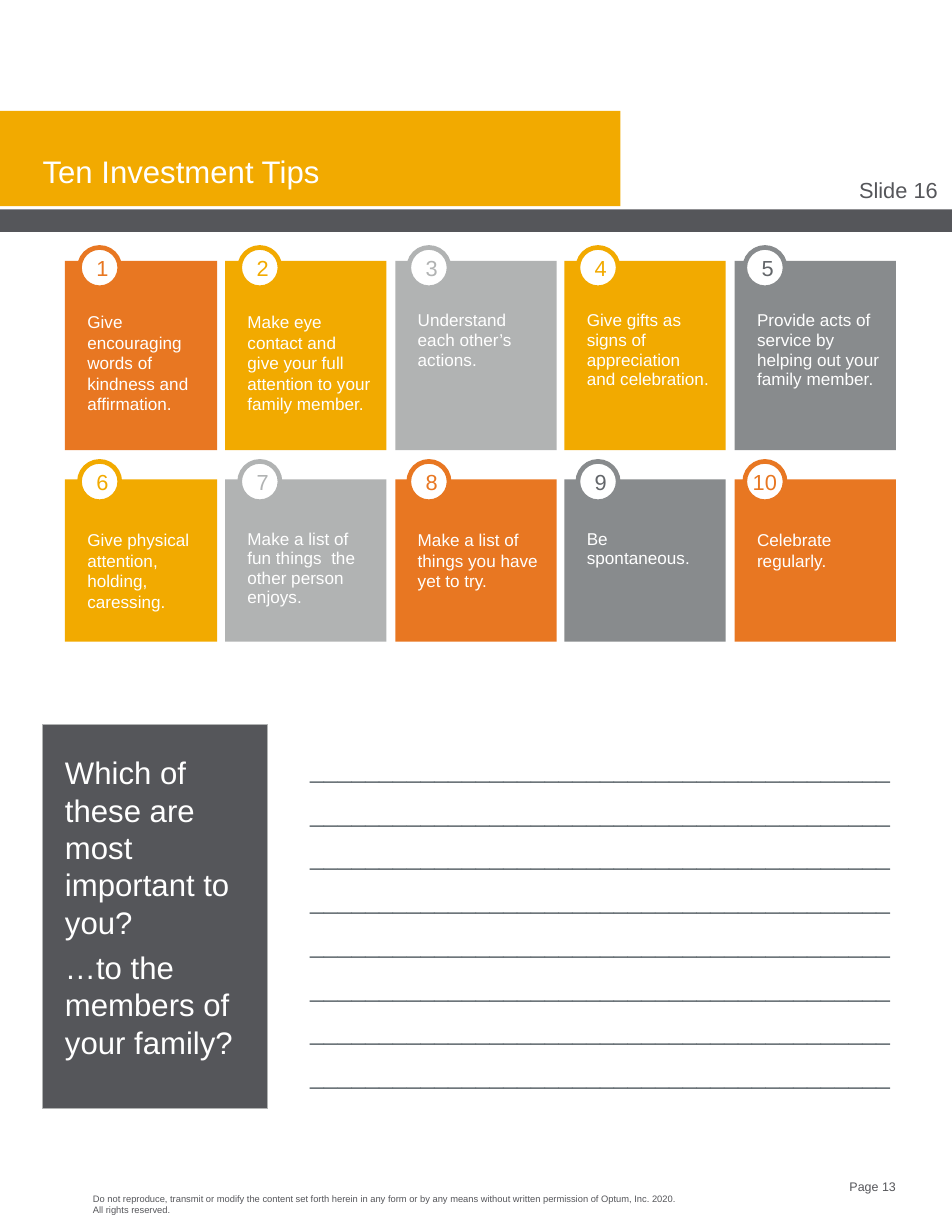
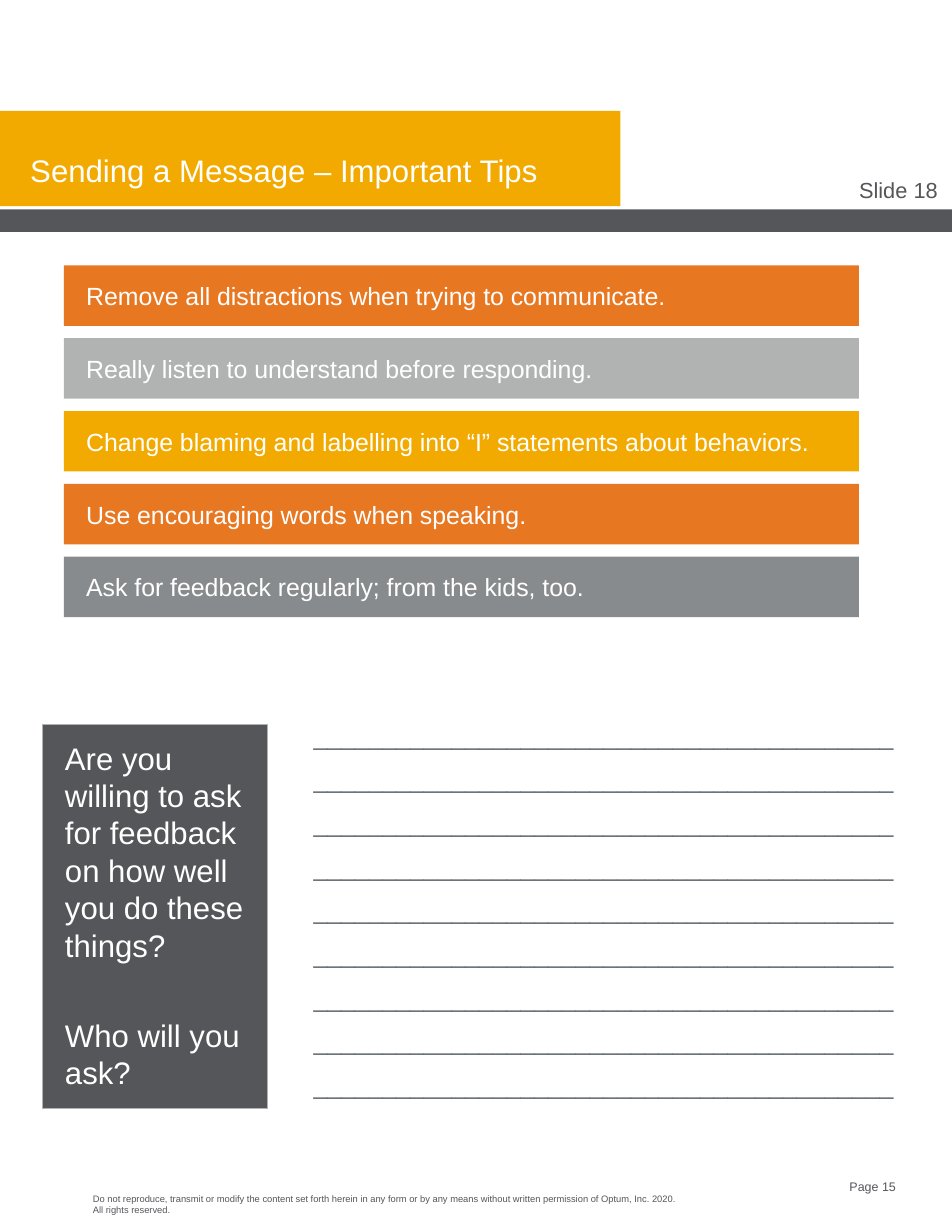
from pptx import Presentation
from pptx.dml.color import RGBColor
from pptx.enum.shapes import MSO_SHAPE
from pptx.enum.text import MSO_ANCHOR, PP_ALIGN
from pptx.util import Inches, Pt

RECT, OVAL = MSO_SHAPE.RECTANGLE, MSO_SHAPE.OVAL
TOP, MIDDLE = MSO_ANCHOR.TOP, MSO_ANCHOR.MIDDLE
LEFT, CENTER, RIGHT = PP_ALIGN.LEFT, PP_ALIGN.CENTER, PP_ALIGN.RIGHT

FONT = "Arial"
WHITE, DARK, RULE = "FFFFFF", "55565A", "646D72"
ORANGE, AMBER, SILVER, GRAY = "E87722", "F2AA00", "B1B3B3", "888B8D"
DIGIT = {GRAY: "63666A"}
FLAT = (0, 0, 0, 0)
LEGAL = ("Do not reproduce, transmit or modify the content set forth herein in any form "
         "or by any means without written permission of Optum, Inc. 2020. "
         "All rights reserved.")

COLUMNS = [(0.58, 1.36), (2.01, 1.44), (3.53, 1.44), (5.04, 1.44), (6.56, 1.44)]
BADGES = [0.71, 2.14, 3.65, 5.16, 6.65]
ROWS = [(2.33, 1.69, 2.21), (4.28, 1.45, 4.12)]
TIGHT = {3, 4, 5, 7, 9}
TIPS = [
    (ORANGE, "Give encouraging words of kindness and affirmation."),
    (AMBER, "Make eye contact and give your full attention to your family member."),
    (SILVER, "Understand each other’s actions."),
    (AMBER, "Give gifts as signs of appreciation and celebration."),
    (GRAY, "Provide acts of service by helping out your family member."),
    (AMBER, "Give physical attention, holding, caressing."),
    (SILVER, "Make a list of fun things  the other person enjoys."),
    (ORANGE, "Make a list of things you have yet to try."),
    (GRAY, "Be spontaneous."),
    (ORANGE, "Celebrate regularly."),
]
BARS = [
    (ORANGE, "Remove all distractions when trying to communicate."),
    (SILVER, "Really listen to understand before responding."),
    (AMBER, "Change blaming and labelling into “I” statements about behaviors."),
    (ORANGE, "Use encouraging words when speaking."),
    (GRAY, "Ask for feedback regularly; from the kids, too."),
]


def color(code):
    return RGBColor.from_string(code)


def write(shape, lines, size, ink, inset=FLAT, align=LEFT, anchor=TOP,
          before=0, after=0, pitch=None):
    frame = shape.text_frame
    frame.text = "\n".join(lines)
    frame.word_wrap = True
    frame.vertical_anchor = anchor
    (frame.margin_left, frame.margin_top,
     frame.margin_right, frame.margin_bottom) = map(Inches, inset)
    for index, para in enumerate(frame.paragraphs):
        para.alignment = align
        para.space_before = Pt(before if index else 0)
        para.space_after = Pt(after)
        if pitch:
            para.line_spacing = pitch
        for run in para.runs:
            run.font.name = FONT
            run.font.size = Pt(size)
            run.font.color.rgb = color(ink)


def label(slide, box, lines, size, ink, **style):
    write(slide.shapes.add_textbox(*map(Inches, box)), lines, size, ink, **style)


def block(slide, kind, box, fill, line=None, width=0.75):
    shape = slide.shapes.add_shape(kind, *map(Inches, box))
    shape.shadow.inherit = False
    shape.fill.solid()
    shape.fill.fore_color.rgb = color(fill)
    if line:
        shape.line.color.rgb = color(line)
        shape.line.width = Pt(width)
    else:
        shape.line.fill.background()
    return shape


def frame_page(deck, title, spot, number, page):
    slide = deck.slides.add_slide(deck.slide_layouts[6])
    block(slide, RECT, (0, 0.99, 5.54, 0.85), AMBER)
    block(slide, RECT, (0, 1.87, 8.5, 0.2), DARK)
    label(slide, (*spot, 6.41, 0.3), [title], 20, WHITE, pitch=0.9)
    label(slide, (7.67, 1.58, 0.97, 0.24), [f"Slide {number}"], 14, DARK)
    label(slide, (0.83, 10.65, 5.3, 0.2), [LEGAL], 6, DARK)
    label(slide, (7.19, 10.53, 0.81, 0.13), [f"Page {page}"], 8, DARK, align=RIGHT)
    return slide


def ask(slide, box, lines, gap):
    block(slide, RECT, (0.38, 6.47, 2.01, 3.43), DARK, SILVER)
    label(slide, box, lines, 20, WHITE, before=gap)


def rule_lines(slide, box, count):
    label(slide, box, ["_" * 42] * count, 16, RULE,
          inset=(0.11, 0.11, 0.11, 0.14), after=8.9)


def card(slide, box, number, fill, text):
    shape = block(slide, RECT, box, fill)
    tight = number in TIGHT
    write(shape, [text], 11, WHITE, inset=(0.2, 0.45, 0.13, 0.07),
          after=3 if tight else 0, pitch=0.95 if tight else None)


def badge(slide, left, top, number, fill):
    shape = block(slide, OVAL, (left, top, 0.36, 0.36), WHITE, fill, 3)
    inset = FLAT if number > 9 else (0.1, 0.05, 0.1, 0.05)
    write(shape, [str(number)], 14, DIGIT.get(fill, fill), inset=inset,
          align=CENTER, anchor=MIDDLE)


def tip_grid(slide):
    for index, (fill, text) in enumerate(TIPS):
        row, col = divmod(index, len(COLUMNS))
        left, width = COLUMNS[col]
        top, height, rise = ROWS[row]
        card(slide, (left, top, width, height), index + 1, fill, text)
        badge(slide, BADGES[col], rise, index + 1, fill)


def bar_list(slide, left, top, width, height, step):
    for index, (fill, text) in enumerate(BARS):
        bar = block(slide, RECT, (left, top + index * step, width, height), fill)
        write(bar, [text], 16, WHITE, inset=(0.2, 0.05, 0.1, 0.05), anchor=MIDDLE)


def main():
    deck = Presentation()
    deck.slide_width, deck.slide_height = Inches(8.5), Inches(11)

    tips = frame_page(deck, "Ten Investment Tips", (0.38, 1.4), 16, 13)
    tip_grid(tips)
    ask(tips, (0.58, 6.73, 1.62, 2.76),
        ["Which of these are most important to you?",
         "…to the members of your family?"], 5)
    rule_lines(tips, (2.66, 6.62, 5.46, 3.43), 8)

    message = frame_page(deck, "Sending a Message – Important Tips", (0.27, 1.39), 18, 15)
    bar_list(message, 0.57, 2.37, 7.1, 0.54, 0.65)
    ask(message, (0.58, 6.6, 1.62, 3.17),
        ["Are you willing to ask for feedback on how well you do these things?",
         "Who will you ask?"], 34)
    rule_lines(message, (2.69, 6.32, 5.46, 4.09), 9)

    deck.save("out.pptx")


if __name__ == "__main__":
    main()
